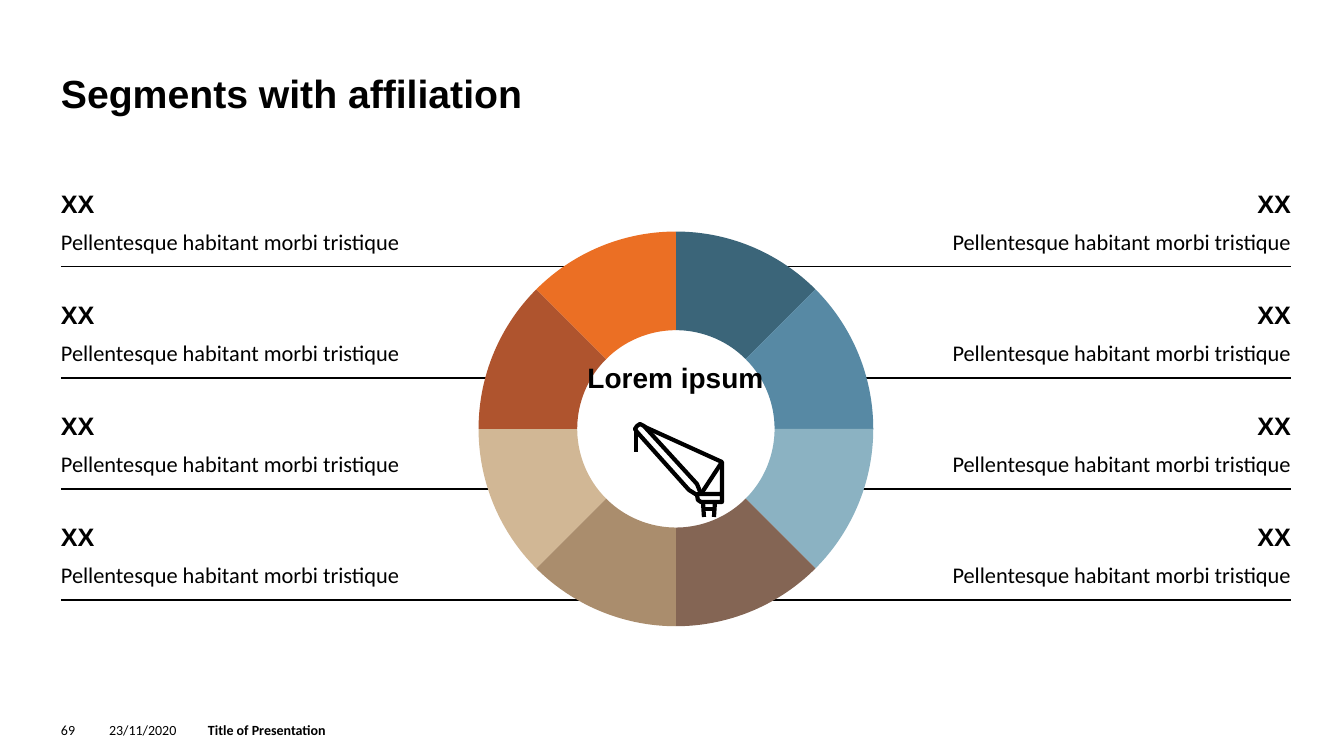
import pptx
import pptx.chart.data
import pptx.dml.color
import pptx.enum.chart
import pptx.enum.shapes
import pptx.enum.text
import pptx.oxml
import pptx.util

EMU_PER_PX = 914400 / 100.8
LEFT, RIGHT = 61, 1291
BLACK = "000000"
ALIGN = pptx.enum.text.PP_ALIGN
ANCHOR = pptx.enum.text.MSO_ANCHOR

SEGMENT_COLOURS = ["3B6579", "5789A4", "8BB2C2", "846554",
                   "AA8D6D", "D1B795", "AF542E", "EB6F24"]
AFFILIATIONS = [("XX", "Pellentesque habitant morbi tristique")] * 4
RULE_LENGTHS = [524, 436, 436, 524]
ROW_PITCH = 111

# Crane outlines and struts, in px from the corner of the icon
CRANE_ARM = [(65, 74), (57, 69), (5, 11), (3, 8), (5, 5), (8, 3), (12, 5), (65, 63), (69, 73)]
CRANE_CABIN = [(90, 73), (66, 73), (65, 74), (66, 79), (69, 81), (90, 81), (90, 41), (13, 6)]
CRANE_STRUTS = [((4, 31), (4, 9)), ((90, 41), (69, 73)), ((71, 81), (72, 96)),
                ((72, 88), (82, 88)), ((82, 96), (83, 81))]


def px(length):
    return pptx.util.Emu(round(length * EMU_PER_PX))


def colour(hex_code):
    return pptx.dml.color.RGBColor.from_string(hex_code)


def write(paragraph, text, size, font="Calibri", bold=False, align=ALIGN.LEFT,
          line_spacing=None, before=None):
    paragraph.alignment = align
    if line_spacing is not None:
        paragraph.line_spacing = line_spacing
    if before is not None:
        paragraph.space_before = pptx.util.Pt(before)
    run = paragraph.add_run()
    run.text = text
    run.font.size = pptx.util.Pt(size)
    run.font.name = font
    run.font.bold = bold
    run.font.color.rgb = colour(BLACK)


def set_frame(shape, anchor, inset=0):
    """Make the text wrap, with no side insets and the given top and bottom inset."""
    frame = shape.text_frame
    frame.word_wrap = True
    frame.auto_size = pptx.enum.text.MSO_AUTO_SIZE.NONE
    frame.vertical_anchor = anchor
    frame.margin_left = frame.margin_right = 0
    frame.margin_top = frame.margin_bottom = px(inset)
    return frame


def add_text_frame(slide, x, y, width, height, anchor, inset=0):
    box = slide.shapes.add_textbox(px(x), px(y), px(width), px(height))
    return set_frame(box, anchor, inset)


def add_line(shapes, start, end, weight):
    line = shapes.add_connector(pptx.enum.shapes.MSO_CONNECTOR.STRAIGHT,
                                *(px(v) for v in (*start, *end)))
    line.line.color.rgb = colour(BLACK)
    line.line.width = pptx.util.Pt(weight)
    properties = line._element.spPr
    properties.append(pptx.oxml.parse_xml(
        '<a:effectLst xmlns:a="http://schemas.openxmlformats.org/drawingml/2006/main"/>'))


def add_title(slide, x, y, width, height):
    title = slide.shapes.title
    title.left, title.top, title.width, title.height = map(px, (x, y, width, height))
    write(set_frame(title, ANCHOR.TOP).paragraphs[0], "Segments with affiliation",
          size=28, font="Arial", bold=True)


def add_affiliations(slide, x, y, width, height, align):
    """Stack the labelled rules of one side, each rule running from the outer edge."""
    for row, ((label, detail), length) in enumerate(zip(AFFILIATIONS, RULE_LENGTHS)):
        top = y + row * ROW_PITCH
        bottom = top + height
        start = x if align == ALIGN.LEFT else x + width - length
        add_line(slide.shapes, (start, bottom), (start + length, bottom), weight=0.75)
        frame = add_text_frame(slide, x, top, width, height, ANCHOR.BOTTOM, inset=12)
        write(frame.paragraphs[0], label, size=18, font="Arial", bold=True,
              align=align, line_spacing=1.2)
        write(frame.add_paragraph(), detail, size=16, align=align,
              line_spacing=1.2, before=3)


def add_ring(slide, x, y, size):
    data = pptx.chart.data.CategoryChartData()
    data.categories = [str(n) for n in range(1, len(SEGMENT_COLOURS) + 1)]
    data.add_series("Series 1", [12] * len(SEGMENT_COLOURS))
    chart = slide.shapes.add_chart(pptx.enum.chart.XL_CHART_TYPE.DOUGHNUT,
                                   px(x), px(y), px(size), px(size), data).chart
    chart.has_title = chart.has_legend = False
    chart.font.size = pptx.util.Pt(12)
    chart.font.name = "Calibri"
    chart.font.color.rgb = colour(BLACK)
    plot = chart.plots[0]
    plot.vary_by_categories = True
    for index, hex_code in enumerate(SEGMENT_COLOURS):
        segment = plot.series[0].points[index].format
        segment.fill.solid()
        segment.fill.fore_color.rgb = colour(hex_code)
        segment.line.fill.background()
    chart._chartSpace.xpath(".//c:holeSize")[0].set("val", "85")
    plot_area = chart._chartSpace.xpath(".//c:plotArea")[0]
    for old_layout in plot_area.xpath("c:layout"):
        plot_area.remove(old_layout)
    plot_area.insert(0, pptx.oxml.parse_xml(
        '<c:layout xmlns:c="http://schemas.openxmlformats.org/drawingml/2006/chart">'
        '<c:manualLayout><c:layoutTarget val="inner"/>'
        '<c:xMode val="edge"/><c:yMode val="edge"/>'
        '<c:x val="0.03"/><c:y val="0.03"/><c:w val="0.94"/><c:h val="0.94"/>'
        '</c:manualLayout></c:layout>'))


def add_crane(slide, x, y):
    crane = slide.shapes.add_group_shape().shapes
    for outline in (CRANE_ARM, CRANE_CABIN):
        points = [(x + dx, y + dy) for dx, dy in outline]
        builder = crane.build_freeform(*points[0], scale=EMU_PER_PX)
        builder.add_line_segments(points[1:], close=False)
        shape = builder.convert_to_shape()
        shape.shadow.inherit = False
        shape.fill.background()
        shape.line.color.rgb = colour(BLACK)
        shape.line.width = pptx.util.Pt(3)
    for strut in CRANE_STRUTS:
        add_line(crane, *((x + dx, y + dy) for dx, dy in strut), weight=3)


def add_centre_label(slide, x, y, width, height):
    frame = add_text_frame(slide, x, y, width, height, ANCHOR.BOTTOM)
    write(frame.paragraphs[0], "Lorem ipsum", size=20, font="Arial", bold=True,
          align=ALIGN.CENTER, line_spacing=1.2)


def add_footer(slide, x, y, height):
    for offset, width, text, bold in ((0, 31, "69", False),
                                      (48, 88, "23/11/2020", False),
                                      (147, 850, "Title of Presentation", True)):
        frame = add_text_frame(slide, x + offset, y, width, height, ANCHOR.MIDDLE)
        write(frame.paragraphs[0], text, size=10, bold=bold)


def main():
    deck = pptx.Presentation()
    deck.slide_width, deck.slide_height = px(1344), px(756)
    slide = deck.slides.add_slide(deck.slide_layouts.get_by_name("Title Only"))
    add_title(slide, LEFT, 69, RIGHT - LEFT, 47)
    column = 389
    add_affiliations(slide, LEFT, 187, column, 80, ALIGN.LEFT)
    add_affiliations(slide, RIGHT - column, 187, column, 80, ALIGN.RIGHT)
    add_ring(slide, 466, 219, 420)
    add_crane(slide, 632, 421)
    add_centre_label(slide, 529, 347, 293, 47)
    add_footer(slide, LEFT, 722, 16)
    deck.save("out.pptx")


if __name__ == "__main__":
    main()
